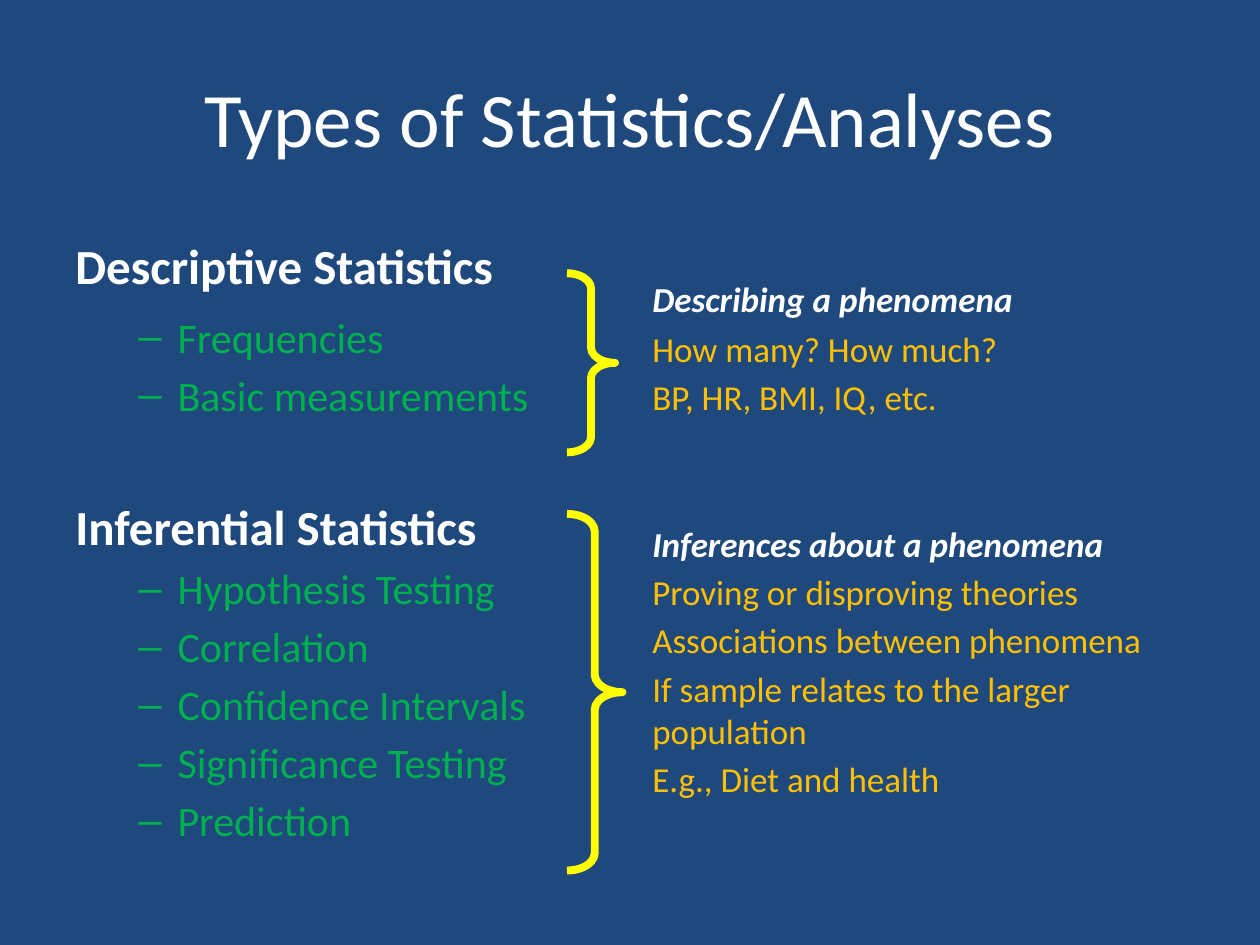
import pptx
import pptx.util
import pptx.dml.color
import pptx.enum.shapes
import pptx.enum.text
import pptx.oxml
import pptx.oxml.ns
import lxml.etree

Cm, Pt = pptx.util.Cm, pptx.util.Pt
RGB = pptx.dml.color.RGBColor.from_string
ALIGN = pptx.enum.text.PP_ALIGN
ANCHOR = pptx.enum.text.MSO_ANCHOR

THEME = {
    "font": "Calibri",
    "background": RGB("1F497D"),
    "brace": RGB("FFFF00"),
    "title": {"size": Pt(44), "color": RGB("FFFFFF")},
    "heading": {"size": Pt(28), "color": RGB("FFFFFF"), "bold": True, "before": 5},
    "item": {"size": Pt(24), "color": RGB("00B050"), "before": 4.3},
    "purpose": {"size": Pt(20), "color": RGB("FFFFFF"), "bold": True, "italic": True, "before": 3.6},
    "example": {"size": Pt(20), "color": RGB("FFC000"), "before": 3.6},
}


def add_dash(para):
    """Give a paragraph a hanging indent with a dash bullet."""
    props = para._p.get_or_add_pPr()
    props.set("marL", str(Cm(2.06)))
    props.set("indent", str(-Cm(0.79)))
    for tag, key, value in (("a:buFont", "typeface", "Arial"), ("a:buChar", "char", "–")):
        lxml.etree.SubElement(props, pptx.oxml.ns.qn(tag)).set(key, value)


def add_text(page, bounds, anchor, lines, align=ALIGN.LEFT):
    """Add a text box; each line is (style, text, extra space before in points)."""
    box = page.shapes.add_textbox(*map(Cm, bounds))
    frame = box.text_frame
    for name, value in {"word_wrap": True, "vertical_anchor": anchor}.items():
        setattr(frame, name, value)
    for index, (style, text, gap) in enumerate(lines):
        look = THEME[style]
        para = frame.add_paragraph() if index else frame.paragraphs[0]
        para.alignment = align
        para.space_before = Pt(look.get("before", 0) + gap)
        if style == "item":
            add_dash(para)
        span = para.add_run()
        span.text = text
        span.font.color.rgb = look["color"]
        settings = {"name": THEME["font"], "size": look["size"],
                    "bold": look.get("bold", False), "italic": look.get("italic", False)}
        for name, value in settings.items():
            setattr(span.font, name, value)


# Deck and page
deck = pptx.Presentation()
deck.slide_width, deck.slide_height = Cm(25.4), Cm(19.05)
page = deck.slides.add_slide(deck.slide_layouts[6])
page.background.fill.solid()
page.background.fill.fore_color.rgb = THEME["background"]

# Title
add_text(page, (1.27, 0.76, 22.86, 3.18), ANCHOR.MIDDLE,
         [("title", "Types of Statistics/Analyses", 0)], ALIGN.CENTER)

# Left column: kinds of statistics
LEFT, RIGHT, WIDTH = 1.27, 12.9, 11.23
add_text(page, (LEFT, 4.27, WIDTH, 1.78), ANCHOR.BOTTOM,
         [("heading", "Descriptive Statistics", 0)])
descriptive = ["Frequencies", "Basic measurements"]
inferential = ["Hypothesis Testing", "Correlation", "Confidence Intervals",
               "Significance Testing", "Prediction"]
add_text(page, (LEFT, 6.15, WIDTH, 12.17), ANCHOR.TOP,
         [("item", text, 0) for text in descriptive]
         + [("heading", "Inferential Statistics", 39)]
         + [("item", text, 0) for text in inferential])

# Right column: what each kind is for
add_text(page, (RIGHT, 4.78, WIDTH, 1.78), ANCHOR.BOTTOM,
         [("purpose", "Describing a phenomena", 0)])
describing = ["How many? How much?", "BP, HR, BMI, IQ, etc."]
inferring = ["Proving or disproving theories", "Associations between phenomena",
             "If sample relates to the larger population", "E.g., Diet and health"]
add_text(page, (RIGHT, 6.48, WIDTH, 12.17), ANCHOR.TOP,
         [("example", text, 0) for text in describing]
         + [("purpose", "Inferences about a phenomena", 56)]
         + [("example", text, 0) for text in inferring])

# Braces joining the columns
for top, width, height in ((5.51, 0.97, 3.61), (10.36, 1.12, 7.19)):
    brace = page.shapes.add_shape(pptx.enum.shapes.MSO_SHAPE.RIGHT_BRACE,
                                  Cm(11.43), Cm(top), Cm(width), Cm(height))
    brace.adjustments[0], brace.adjustments[1] = 0.315, 0.5
    brace.shadow.inherit = False
    brace.fill.background()
    brace.line.color.rgb = THEME["brace"]
    brace.line.width = Pt(4.5)

deck.save("out.pptx")
